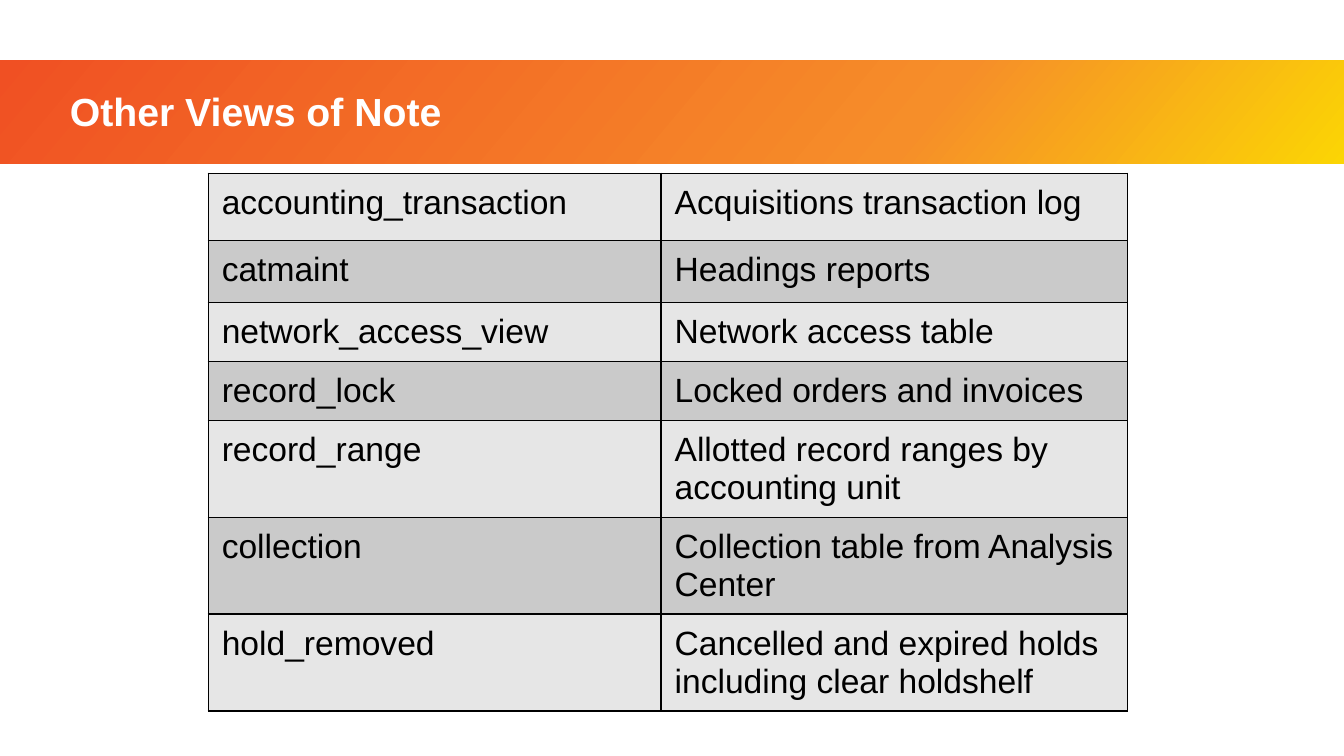
"""Build the slide that lists other database views of note."""
from copy import deepcopy
from dataclasses import dataclass

from pptx import Presentation
from pptx.dml.color import RGBColor
from pptx.enum.shapes import MSO_SHAPE
from pptx.enum.text import MSO_ANCHOR, MSO_AUTO_SIZE, PP_ALIGN
from pptx.oxml import parse_xml
from pptx.oxml.ns import nsdecls, qn
from pptx.util import Inches, Pt

RECTANGLE = MSO_SHAPE.RECTANGLE
MIDDLE = MSO_ANCHOR.MIDDLE
NO_AUTOFIT = MSO_AUTO_SIZE.NONE
LEFT = PP_ALIGN.LEFT
TITLE_ONLY = 5
SLIDE_WIDTH = 10
SLIDE_HEIGHT = SLIDE_WIDTH * 9 / 16


@dataclass(frozen=True)
class Theme:
    font: str = "Arial"
    title_size: int = 21
    cell_size: int = 18
    title_color: str = "FFFFFF"
    text_color: str = "000000"
    border_color: str = "000000"
    border_width: int = 1
    row_fills: tuple = ("E6E6E6", "CACACA")
    band_stops: tuple = ((0, "F05023"), (0.68, "F68E29"), (1, "FBD504"))
    band_angle: int = 40


@dataclass(frozen=True)
class View:
    name: str
    purpose: str
    height: float = 0.4


THEME = Theme()
COLUMN_WIDTHS = (3.37, 3.47)
VIEWS = (
    View("accounting_transaction", "Acquisitions transaction log", 0.5),
    View("catmaint", "Headings reports", 0.46),
    View("network_access_view", "Network access table"),
    View("record_lock", "Locked orders and invoices"),
    View("record_range", "Allotted record ranges by accounting unit"),
    View("collection", "Collection table from Analysis Center"),
    View("hold_removed", "Cancelled and expired holds including clear holdshelf"),
)


def apply_format(target, values: dict) -> None:
    for name, value in values.items():
        setattr(target, name, value)


def format_font(font, size: int, color: str, bold: bool) -> None:
    apply_format(font, {"name": THEME.font, "size": Pt(size), "bold": bold})
    font.color.rgb = RGBColor.from_string(color)


def add_title(slide, text: str) -> None:
    title = slide.shapes.title
    apply_format(title, {
        "left": Inches(0.42), "top": Inches(0.55),
        "width": Inches(9.09), "height": Inches(0.6),
    })
    frame = title.text_frame
    apply_format(frame, {
        "text": text, "word_wrap": True,
        "auto_size": NO_AUTOFIT, "vertical_anchor": MIDDLE,
    })
    heading = frame.paragraphs[0]
    apply_format(heading, {"alignment": LEFT, "line_spacing": 0.9})
    format_font(heading.runs[0].font, THEME.title_size, THEME.title_color, True)


def add_band(slide) -> None:
    band = slide.shapes.add_shape(
        RECTANGLE, Inches(0), Inches(0.45), Inches(SLIDE_WIDTH), Inches(0.77))
    band.shadow.inherit = False
    band.line.fill.background()
    band.fill.gradient()
    band.fill.gradient_angle = 360 - THEME.band_angle
    stop_list = band.element.spPr.find(".//" + qn("a:gsLst"))
    stop_list.append(deepcopy(stop_list[-1]))
    for stop, (position, color) in zip(band.fill.gradient_stops, THEME.band_stops):
        stop.position = position
        stop.color.rgb = RGBColor.from_string(color)
    slide.shapes.title.element.addprevious(band.element)


def add_borders(cell) -> None:
    properties = cell._tc.get_or_add_tcPr()
    for side in ("lnL", "lnR", "lnT", "lnB"):
        properties.append(parse_xml(
            f'<a:{side} {nsdecls("a")} w="{Pt(THEME.border_width)}"><a:solidFill>'
            f'<a:srgbClr val="{THEME.border_color}"/></a:solidFill></a:{side}>'))


def fill_cell(cell, text: str, color: str) -> None:
    apply_format(cell, {
        "text": text,
        "margin_left": Inches(0.1), "margin_right": Inches(0.1),
        "margin_top": Inches(0.08), "margin_bottom": Inches(0.08),
    })
    add_borders(cell)
    cell.fill.solid()
    cell.fill.fore_color.rgb = RGBColor.from_string(color)
    run = cell.text_frame.paragraphs[0].runs[0]
    format_font(run.font, THEME.cell_size, THEME.text_color, False)


def add_view_table(slide, views: tuple[View, ...]) -> None:
    size = {"width": Inches(6.83), "height": Inches(4.14)}
    view_frame = slide.shapes.add_table(
        len(views), len(COLUMN_WIDTHS), Inches(1.55), Inches(1.29), **size)
    table = view_frame.table
    apply_format(table, {"first_row": False, "horz_banding": False})
    for column, width in zip(table.columns, COLUMN_WIDTHS):
        column.width = Inches(width)
    for index, (row, view) in enumerate(zip(table.rows, views)):
        row.height = Inches(view.height)
        color = THEME.row_fills[index % len(THEME.row_fills)]
        for cell, text in zip(row.cells, (view.name, view.purpose)):
            fill_cell(cell, text, color)
    apply_format(view_frame, size)


def main() -> None:
    presentation = Presentation()
    apply_format(presentation, {
        "slide_width": Inches(SLIDE_WIDTH), "slide_height": Inches(SLIDE_HEIGHT),
    })
    slide = presentation.slides.add_slide(presentation.slide_layouts[TITLE_ONLY])
    add_title(slide, "Other Views of Note")
    add_band(slide)
    add_view_table(slide, VIEWS)
    presentation.save("out.pptx")


if __name__ == "__main__":
    main()
